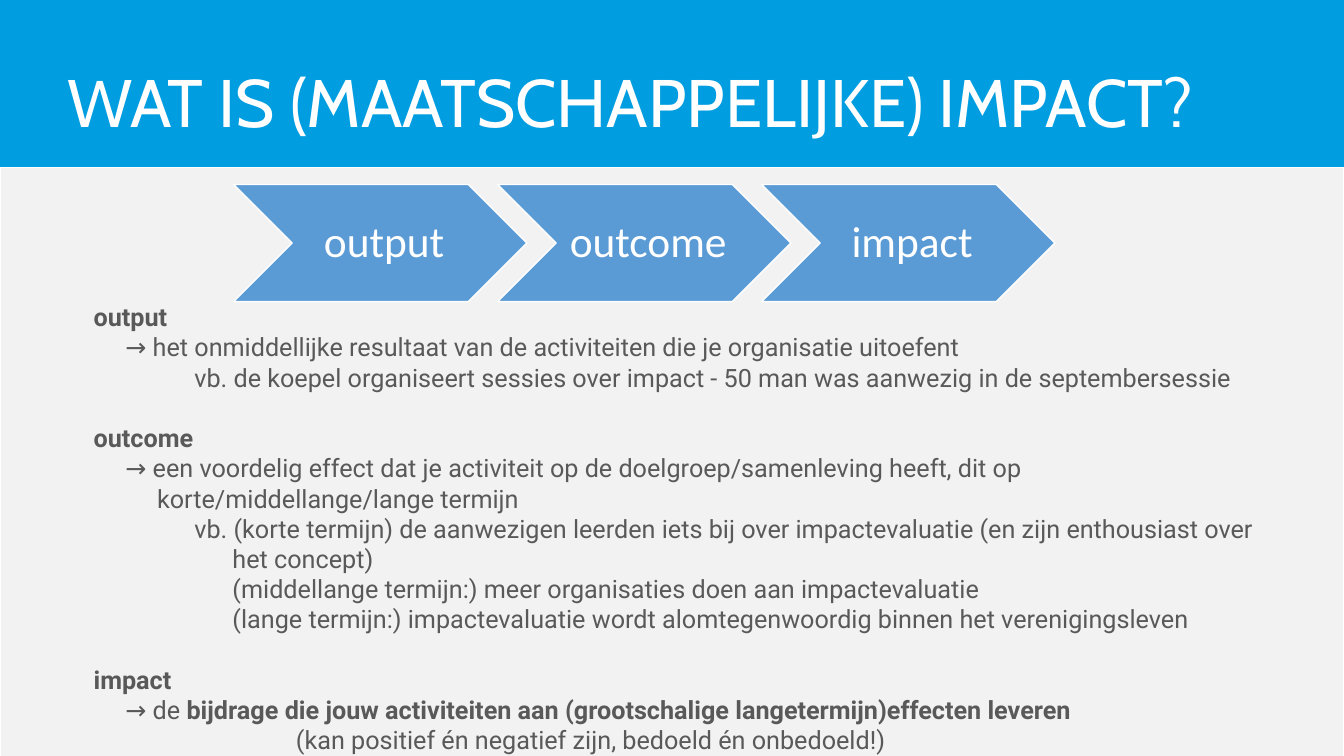
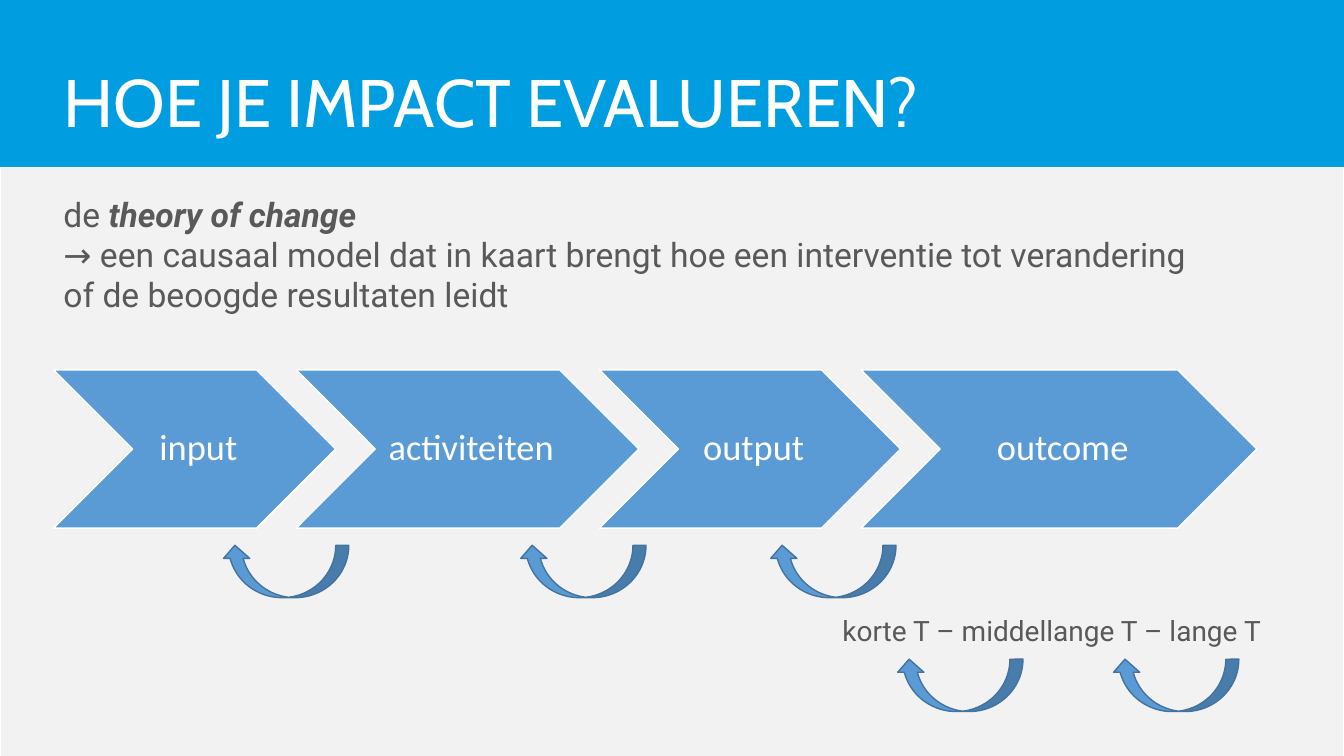
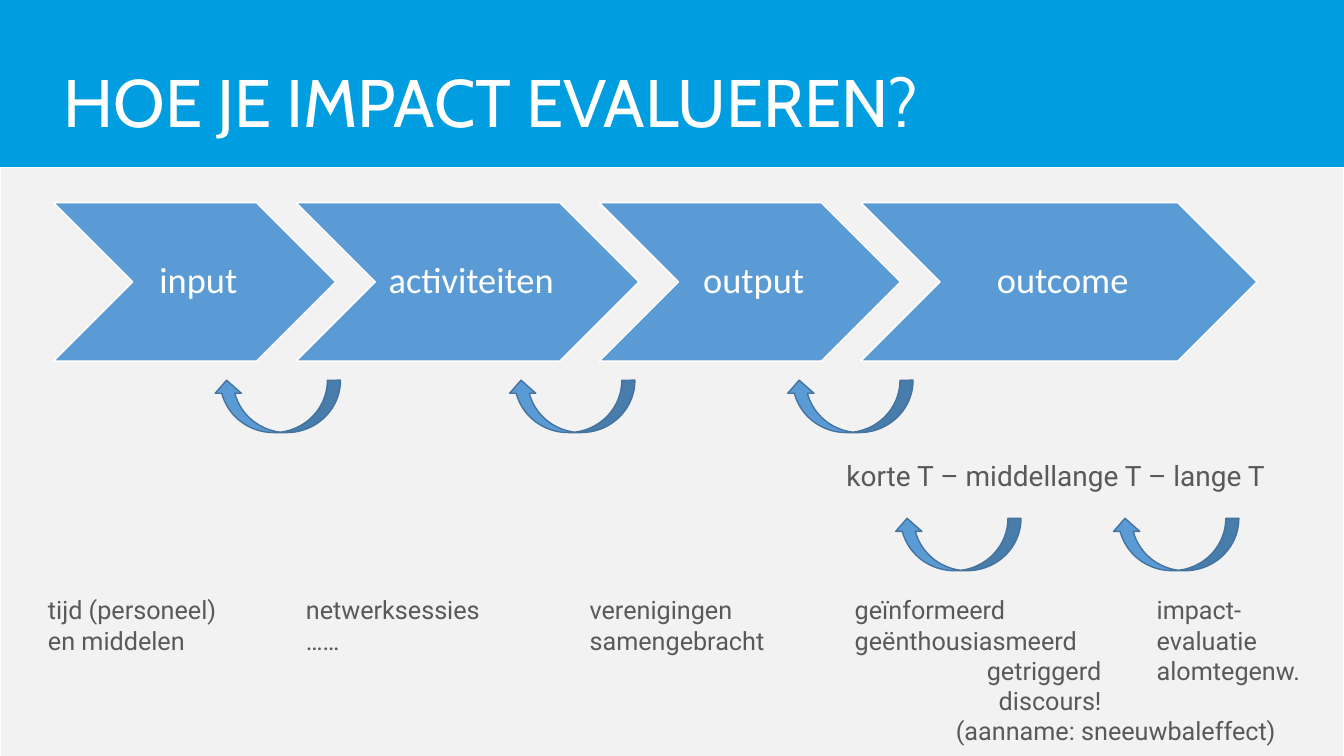
from dataclasses import dataclass

from pptx import Presentation
from pptx import util as u
from pptx.dml.color import RGBColor
from pptx.enum import shapes, text
from pptx.util import Cm, Pt

COLORS = {
    "band": "009DE0",
    "panel": "F2F2F2",
    "white": "FFFFFF",
    "body": "595959",
    "accent": "5B9BD5",
    "accent_edge": "43739E",
}
TITLE_FONT, CHEVRON_FONT, BODY_FONT = "Cabin", "Calibri", "Roboto"
SLIDE_WIDTH, SLIDE_HEIGHT = 33.87, 19.05
PANEL_TOP, PANEL_HEIGHT = 4.22, 15.01


@dataclass(frozen=True)
class Line:
    """One paragraph: plain text, then an optional bold part."""
    plain: str = ""
    strong: str = ""
    indent: float = 0
    gap: float = 0
    italic: bool = False


@dataclass(frozen=True)
class TextBlock:
    left: float
    top: float
    width: float
    height: float
    size: float
    lines: tuple[Line, ...]
    font: str = BODY_FONT
    color: str = "body"


@dataclass(frozen=True)
class Chain:
    """Chevrons that each slide a quarter of their height into the next."""
    left: float
    top: float
    height: float
    size: float
    steps: tuple[tuple[str, float], ...]


@dataclass(frozen=True)
class ArrowRow:
    top: float
    lefts: tuple[float, ...]


def rgb(name: str) -> RGBColor:
    return RGBColor.from_string(COLORS[name])


def style_font(font, name: str, size: float, color: str) -> None:
    font.name, font.size = name, Pt(size)
    font.color.rgb = rgb(color)


def draw_shape(slide, kind, left: float, top: float, width: float,
               height: float, fill: str, line: str):
    shape = slide.shapes.add_shape(kind, Cm(left), Cm(top), Cm(width), Cm(height))
    shape.shadow.inherit = False
    shape.fill.solid()
    shape.fill.fore_color.rgb = rgb(fill)
    shape.line.color.rgb = rgb(line)
    shape.line.width = Pt(1)
    return shape


def draw_text(slide, block: TextBlock) -> None:
    box = slide.shapes.add_textbox(Cm(block.left), Cm(block.top),
                                   Cm(block.width), Cm(block.height))
    frame = box.text_frame
    frame.word_wrap = True
    for index, line in enumerate(block.lines):
        paragraph = frame.add_paragraph() if index else frame.paragraphs[0]
        paragraph.text = line.plain
        if line.indent:
            paragraph._p.get_or_add_pPr().set("marL", str(Cm(line.indent)))
        if line.gap:
            paragraph.space_before = Pt(line.gap)
        if line.strong:
            run = paragraph.add_run()
            run.text = line.strong
            run.font.bold = True
            run.font.italic = line.italic
        for run in paragraph.runs:
            style_font(run.font, block.font, block.size, block.color)


def draw_chain(slide, chain: Chain) -> None:
    left = chain.left
    for label, width in chain.steps:
        shape = draw_shape(slide, shapes.MSO_SHAPE.CHEVRON, left, chain.top,
                           width, chain.height, "accent", "white")
        frame = shape.text_frame
        frame.text = label
        frame.word_wrap = False
        frame.vertical_anchor = text.MSO_ANCHOR.MIDDLE
        frame.margin_left = u.Cm(0.3)
        frame.margin_right = frame.margin_top = frame.margin_bottom = u.Cm(0.11)
        paragraph = frame.paragraphs[0]
        paragraph.alignment = text.PP_ALIGN.CENTER
        paragraph.line_spacing = 0.9
        style_font(paragraph.runs[0].font, CHEVRON_FONT, chain.size, "white")
        left += width - chain.height / 4


def draw_arrows(slide, row: ArrowRow) -> None:
    for left in row.lefts:
        arrow = draw_shape(slide, shapes.MSO_SHAPE.CURVED_DOWN_ARROW, left, row.top,
                           3.2, 1.32, "accent", "accent_edge")
        arrow.rotation = 180


def add_slide(presentation, title: str, title_left: float = 1.35):
    """Blank slide with the shared panel and title."""
    slide = presentation.slides.add_slide(presentation.slide_layouts[6])
    draw_shape(slide, shapes.MSO_SHAPE.RECTANGLE, 0, PANEL_TOP, SLIDE_WIDTH,
               PANEL_HEIGHT, "panel", "white")
    draw_text(slide, TextBlock(title_left, 1.4, 30.5, 2.31, 48, (Line(title),),
                               TITLE_FONT, "white"))
    return slide


# Slide 1: definitions
IMPACT_CHAIN = Chain(5.89, 4.65, 2.95, 31,
                     (("output", 7.39), ("outcome", 7.39), ("impact", 7.39)))
ARROW_INDENT, EXAMPLE_INDENT, DETAIL_INDENT = 0.8, 2.54, 3.5
SECTION_GAP = 21.6
DEFINITIONS = TextBlock(2.11, 7.47, 30.5, 11.79, 18, (
    Line(strong="output"),
    Line("→ het onmiddellijke resultaat van de activiteiten die je organisatie uitoefent",
         indent=ARROW_INDENT),
    Line("vb. de koepel organiseert sessies over impact - 50 man was aanwezig "
         "in de septembersessie", indent=EXAMPLE_INDENT),
    Line(strong="outcome", gap=SECTION_GAP),
    Line("→ een voordelig effect dat je activiteit op de doelgroep/samenleving heeft, dit op",
         indent=ARROW_INDENT),
    Line("korte/middellange/lange termijn", indent=1.6),
    Line("vb. (korte termijn) de aanwezigen leerden iets bij over impactevaluatie "
         "(en zijn enthousiast over", indent=EXAMPLE_INDENT),
    Line("het concept)", indent=DETAIL_INDENT),
    Line("(middellange termijn:) meer organisaties doen aan impactevaluatie",
         indent=DETAIL_INDENT),
    Line("(lange termijn:) impactevaluatie wordt alomtegenwoordig binnen het "
         "verenigingsleven", indent=DETAIL_INDENT),
    Line(strong="impact", gap=SECTION_GAP),
    Line("→ de ", "bijdrage die jouw activiteiten aan (grootschalige "
         "langetermijn)effecten leveren", ARROW_INDENT),
    Line("(kan positief én negatief zijn, bedoeld én onbedoeld!)", indent=5.1),
))

# Slides 2 and 3: theory of change
EVALUATE_TITLE = "HOE JE IMPACT EVALUEREN?"
CHANGE_STEPS = (("input", 7.11), ("activiteiten", 8.64), ("output", 7.59),
                ("outcome", 9.98))
THEORY = TextBlock(1.35, 4.75, 29.54, 4.88, 24, (
    Line("de ", "theory of change", italic=True),
    Line("→ een causaal model dat in kaart brengt hoe een interventie tot "
         "verandering of de beoogde resultaten leidt"),
))

# Slide 3: example under each step, as left edge, width and lines
EXAMPLES = (
    (0.96, 6, (Line("tijd (personeel)"), Line("en middelen"))),
    (7.46, 6, (Line("netwerksessies"), Line("……"))),
    (14.61, 6, (Line("verenigingen"), Line("samengebracht"))),
    (21.29, 12, (Line("geïnformeerd"), Line("geënthousiasmeerd"),
                 Line("getriggerd", indent=3.33), Line("discours!", indent=3.63),
                 Line("(aanname: sneeuwbaleffect)", indent=2.55))),
    (28.9, 4.8, (Line("impact-"), Line("evaluatie"), Line("alomtegenw."))),
)


def draw_change_model(slide, chain_top: float, terms_at: tuple[float, float],
                      step_arrows: ArrowRow, term_arrows: ArrowRow) -> None:
    draw_chain(slide, Chain(1.35, chain_top, 3.99, 26, CHANGE_STEPS))
    draw_text(slide, TextBlock(*terms_at, 11.86, 1.12, 20,
                               (Line("korte T – middellange T – lange T"),)))
    draw_arrows(slide, step_arrows)
    draw_arrows(slide, term_arrows)


def main() -> None:
    presentation = Presentation()
    presentation.slide_width, presentation.slide_height = Cm(SLIDE_WIDTH), Cm(SLIDE_HEIGHT)
    background = presentation.slide_master.background.fill
    background.solid()
    background.fore_color.rgb = rgb("band")

    slide = add_slide(presentation, "WAT IS (MAATSCHAPPELIJKE) IMPACT?", 1.45)
    draw_chain(slide, IMPACT_CHAIN)
    draw_text(slide, DEFINITIONS)

    slide = add_slide(presentation, EVALUATE_TITLE)
    draw_text(slide, THEORY)
    draw_change_model(slide, 9.32, (20.98, 15.34),
                      ArrowRow(13.74, (5.59, 13.08, 19.38)),
                      ArrowRow(16.61, (22.58, 28.02)))

    slide = add_slide(presentation, EVALUATE_TITLE)
    draw_change_model(slide, 5.11, (21.08, 11.43),
                      ArrowRow(9.58, (5.38, 12.8, 19.81)),
                      ArrowRow(13.06, (22.53, 28.02)))
    for left, width, lines in EXAMPLES:
        draw_text(slide, TextBlock(left, 14.86, width, 0.25 + 0.76 * len(lines), 18, lines))

    presentation.save("out.pptx")


if __name__ == "__main__":
    main()
